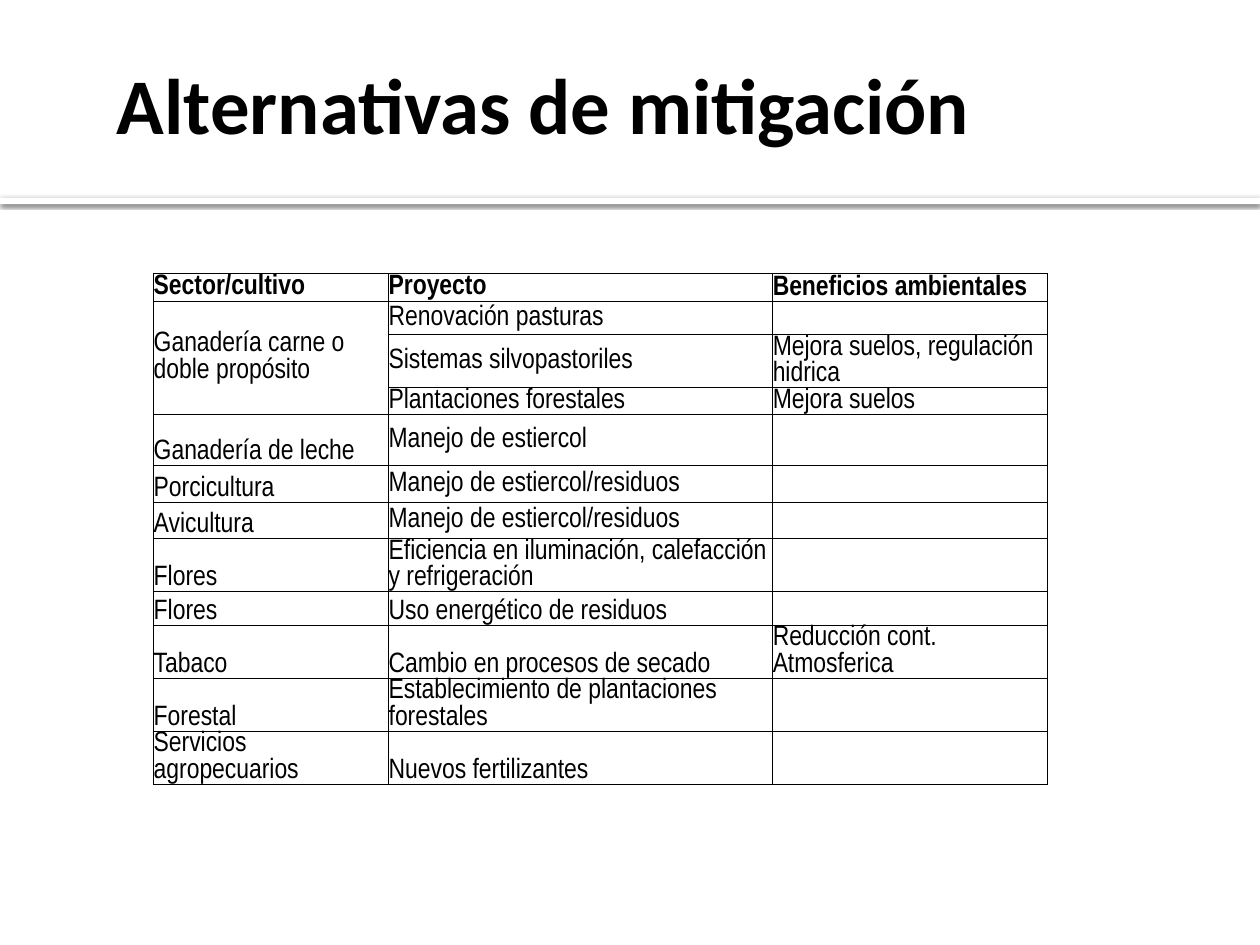
from lxml import etree
from pptx import Presentation
from pptx.dml.color import RGBColor
from pptx.enum.shapes import MSO_SHAPE
from pptx.enum.text import MSO_ANCHOR
from pptx.oxml import parse_xml
from pptx.oxml.ns import nsdecls, qn
from pptx.util import Inches, Pt

RECTANGLE = MSO_SHAPE.RECTANGLE
MIDDLE, BOTTOM = MSO_ANCHOR.MIDDLE, MSO_ANCHOR.BOTTOM
COLORS = {"ink": "000000", "paper": "FFFFFF"}
TITLE_FONT, TABLE_FONT = "Calibri", "Arial Narrow"
TABLE_SIZE, TABLE_LINE = 16, 15.1
PAGE_WIDTH, PAGE_HEIGHT = 10, 7.5

TITLE_BOX = (0.83, 0.13, 8.17, 1.37)
DIVIDER_BOX = (0, 1.57, PAGE_WIDTH, 0.05)
TABLE_BOX = (1.22, 2.17, 7.09, 3.95)
COLUMN_SHARES = (0.263, 0.43, 0.307)

# Row height in inches, anchors of the three columns, texts
ONE_LINE, MEDIUM, TWO_LINES = 0.22, 0.29, 0.42
CENTERED = (MIDDLE, MIDDLE, MIDDLE)
MIXED = (BOTTOM, MIDDLE, MIDDLE)
LOW = (BOTTOM, BOTTOM, BOTTOM)
ROWS = [
    (ONE_LINE, (MIDDLE, MIDDLE, BOTTOM), ("Sector/cultivo", "Proyecto", "Beneficios ambientales")),
    (ONE_LINE, CENTERED, ("Ganadería carne o doble propósito", "Renovación pasturas", "")),
    (TWO_LINES, CENTERED, ("", "Sistemas silvopastoriles", "Mejora suelos, regulación hidrica")),
    (0.21, CENTERED, ("", "Plantaciones forestales", "Mejora suelos")),
    (0.41, MIXED, ("Ganadería de leche", "Manejo de estiercol", "")),
    (MEDIUM, MIXED, ("Porcicultura", "Manejo de estiercol/residuos", "")),
    (MEDIUM, MIXED, ("Avicultura", "Manejo de estiercol/residuos", "")),
    (TWO_LINES, LOW, ("Flores", "Eficiencia en iluminación, calefacción y refrigeración", "")),
    (0.21, LOW, ("Flores", "Uso energético de residuos", "")),
    (TWO_LINES, LOW, ("Tabaco", "Cambio en procesos de secado", "Reducción cont. Atmosferica")),
    (TWO_LINES, LOW, ("Forestal", "Establecimiento de plantaciones forestales", "")),
    (TWO_LINES, LOW, ("Servicios agropecuarios", "Nuevos fertilizantes", "")),
]
MERGED_ROWS = (1, 3)


def format_span(span, font_name, size, bold):
    span.font.name = font_name
    span.font.size = Pt(size)
    span.font.bold = bold
    span.font.color.rgb = RGBColor.from_string(COLORS["ink"])


def add_divider(page, box):
    """Place a thin white bar with a soft shadow below it."""
    bar = page.shapes.add_shape(RECTANGLE, *map(Inches, box))
    bar.shadow.inherit = False
    bar.fill.solid()
    bar.fill.fore_color.rgb = RGBColor.from_string(COLORS["paper"])
    bar.line.fill.background()
    effects = bar.element.spPr.find(qn("a:effectLst"))
    effects.append(parse_xml(
        f'<a:outerShdw {nsdecls("a")} blurRad="{Pt(2.5)}" dist="{Pt(0.8)}" '
        f'dir="5400000" rotWithShape="0"><a:srgbClr val="{COLORS["ink"]}">'
        '<a:alpha val="60000"/></a:srgbClr></a:outerShdw>'))


def add_title(page, box, text):
    frame = page.shapes.add_textbox(*map(Inches, box)).text_frame
    frame.word_wrap = True
    frame.vertical_anchor = MIDDLE
    frame.margin_right = Inches(0.05)
    frame.text = text
    format_span(frame.paragraphs[0].runs[0], TITLE_FONT, 45, True)


def set_borders(cell):
    properties = cell._tc.get_or_add_tcPr()
    for side in ("lnL", "lnR", "lnT", "lnB"):
        properties.append(parse_xml(
            f'<a:{side} {nsdecls("a")} w="{Pt(0.5)}"><a:solidFill>'
            f'<a:srgbClr val="{COLORS["ink"]}"/></a:solidFill></a:{side}>'))


def fill_cell(cell, text, anchor, bold):
    cell.margin_left = cell.margin_right = cell.margin_top = cell.margin_bottom = 0
    cell.vertical_anchor = anchor
    set_borders(cell)
    cell.fill.background()
    para = cell.text_frame.paragraphs[0]
    para.line_spacing = Pt(TABLE_LINE)
    if text:
        para.text = text
        format_span(para.runs[0], TABLE_FONT, TABLE_SIZE, bold)
    else:
        # Keeps an empty cell from stretching its row
        ending = etree.SubElement(para._p, qn("a:endParaRPr"), sz=str(TABLE_SIZE * 100))
        etree.SubElement(ending, qn("a:latin"), typeface=TABLE_FONT)


def add_project_table(page, box):
    shape = page.shapes.add_table(len(ROWS), len(COLUMN_SHARES), *map(Inches, box))
    table = shape.table
    table.first_row = table.horz_banding = False
    for column, share in zip(table.columns, COLUMN_SHARES):
        column.width = Inches(box[2] * share)
    for row_index, (height, anchors, texts) in enumerate(ROWS):
        table.rows[row_index].height = Inches(height)
        for cell, text, anchor in zip(table.rows[row_index].cells, texts, anchors):
            fill_cell(cell, text, anchor, row_index == 0)
    first, last = MERGED_ROWS
    table.cell(first, 0).merge(table.cell(last, 0))


def main():
    deck = Presentation()
    deck.slide_width, deck.slide_height = Inches(PAGE_WIDTH), Inches(PAGE_HEIGHT)
    page = deck.slides.add_slide(deck.slide_layouts[6])
    add_divider(page, DIVIDER_BOX)
    add_title(page, TITLE_BOX, "Alternativas de mitigación")
    add_project_table(page, TABLE_BOX)
    deck.save("out.pptx")


if __name__ == "__main__":
    main()
